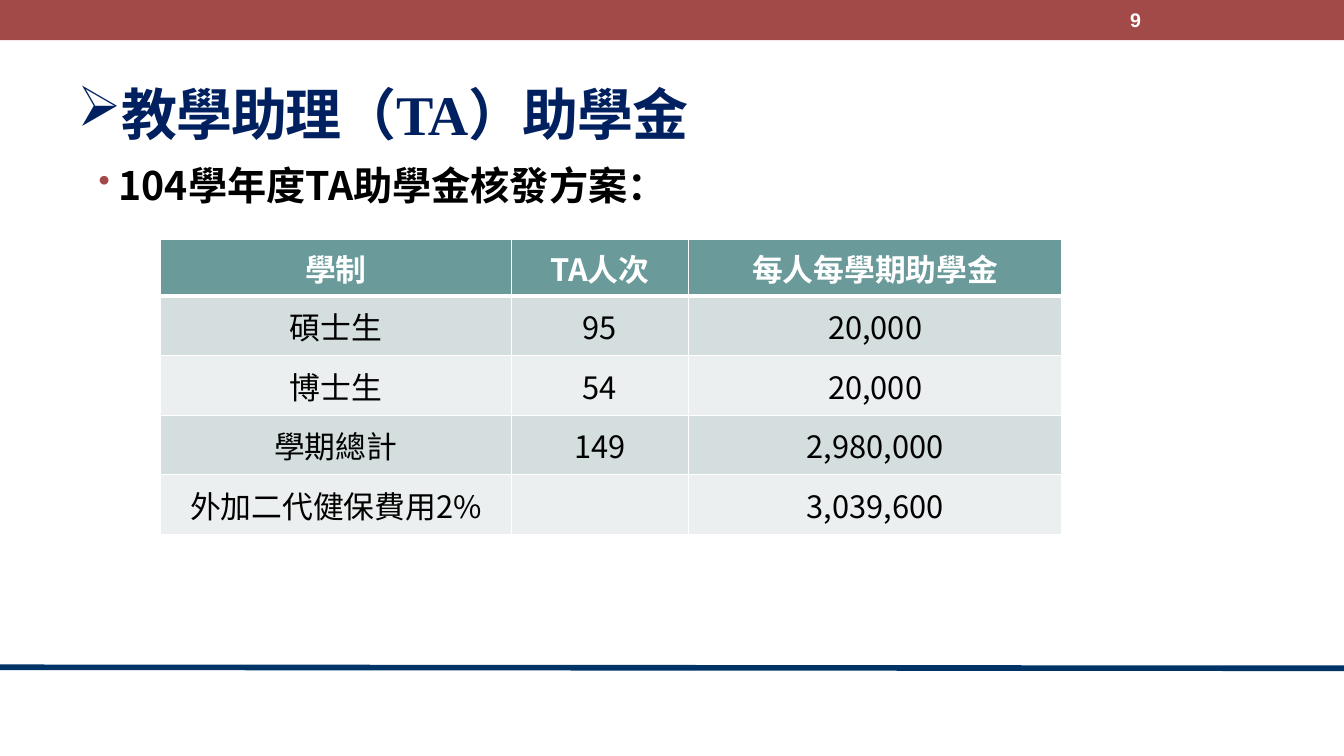
"""Build the slide on teaching assistant grants."""
from lxml.etree import SubElement
from pptx import Presentation
from pptx.dml.color import RGBColor
from pptx.enum.shapes import MSO_CONNECTOR, MSO_SHAPE
from pptx.enum.text import MSO_ANCHOR, PP_ALIGN
from pptx.oxml.ns import qn
from pptx.util import Inches, Pt

SANS = "Noto Sans CJK SC"
TEXTS = [
    {"text": "教學助理（TA）助學金", "box": (0.67, 0.58, 12, 1.08),
     "anchor": MSO_ANCHOR.MIDDLE, "spacing": -100, "bullet": {"char": "➢"},
     "format": {"size": 40, "name": "Times New Roman", "color": "002060", "bold": True}},
    {"text": "104學年度TA助學金核發方案：", "box": (0.88, 1.55, 10.5, 5.29),
     "anchor": MSO_ANCHOR.TOP, "space_before": 5.6,
     "bullet": {"char": "•", "indent": 0.2, "color": "A24A48", "percent": 85},
     "format": {"size": 28, "name": SANS, "color": "000000", "bold": True}},
    {"text": "9", "box": (11.11, 0.02, 1.56, 0.36), "anchor": MSO_ANCHOR.MIDDLE,
     "format": {"size": 14, "name": "Arial", "color": "FFFFFF", "bold": True}},
]
GRANTS = [
    ("學制", "TA人次", "每人每學期助學金"),
    ("碩士生", "95", "20,000"),
    ("博士生", "54", "20,000"),
    ("學期總計", "149", "2,980,000"),
    ("外加二代健保費用2%", "", "3,039,600"),
]
COLUMN_WIDTHS = (3.48, 1.76, 3.7)
ROW_HEIGHTS = (0.56, 0.59, 0.59, 0.59, 0.59)
HEADER_FILL = "6A9A9A"
BAND_FILLS = ("EBEFEF", "D4DEDE")
HEADER_FORMAT = {"size": 22, "name": SANS, "color": "FFFFFF", "bold": True}
BODY_FORMAT = {**HEADER_FORMAT, "color": "000000", "bold": False}


def color(value):
    return RGBColor.from_string(value)


def fill_solid(target, value):
    target.fill.solid()
    target.fill.fore_color.rgb = color(value)


def add_text(paragraph, text, formats, spacing=None):
    run = paragraph.add_run()
    run.text = text
    for key, value in formats.items():
        if key == "color":
            run.font.color.rgb = color(value)
        else:
            setattr(run.font, key, Pt(value) if key == "size" else value)
    properties = run._r.get_or_add_rPr()
    SubElement(properties, qn("a:ea"), typeface=SANS)
    if spacing:
        properties.set("spc", str(spacing))


def add_bullet(paragraph, char, indent=0, color=None, percent=None):
    properties = paragraph._p.get_or_add_pPr()
    properties.set("marL", str(Inches(indent)))
    properties.set("indent", str(-Inches(indent)))
    if color:
        SubElement(SubElement(properties, qn("a:buClr")), qn("a:srgbClr"), val=color)
    if percent:
        SubElement(properties, qn("a:buSzPct"), val=str(percent * 1000))
    SubElement(properties, qn("a:buChar"), char=char)


def add_text_box(slide, item):
    frame = slide.shapes.add_textbox(*map(Inches, item["box"])).text_frame
    frame.word_wrap = True
    frame.vertical_anchor = item["anchor"]
    paragraph = frame.paragraphs[0]
    if "space_before" in item:
        paragraph.space_before = Pt(item["space_before"])
    if "bullet" in item:
        add_bullet(paragraph, **item["bullet"])
    add_text(paragraph, item["text"], item["format"], item.get("spacing"))


def add_borders(cell, widths):
    properties = cell._tc.get_or_add_tcPr()
    for side, width in widths.items():
        line = SubElement(properties, qn(f"a:ln{side}"), w=str(Pt(width)))
        SubElement(SubElement(line, qn("a:solidFill")), qn("a:srgbClr"), val="FFFFFF")


def add_grant_table(slide):
    table = slide.shapes.add_table(
        len(GRANTS), len(COLUMN_WIDTHS), Inches(1.59), Inches(2.38),
        Inches(sum(COLUMN_WIDTHS)), Inches(sum(ROW_HEIGHTS))).table
    for column, width in zip(table.columns, COLUMN_WIDTHS):
        column.width = Inches(width)
    for index, (row, height, values) in enumerate(zip(table.rows, ROW_HEIGHTS, GRANTS)):
        row.height = Inches(height)
        header = index == 0
        borders = {"L": 1, "R": 1, "T": 3 if index == 1 else 1, "B": 3 if header else 1}
        for cell, value in zip(row.cells, values):
            cell.margin_left = cell.margin_right = cell.margin_top = Inches(0.01)
            cell.margin_bottom = 0
            cell.vertical_anchor = MSO_ANCHOR.MIDDLE
            add_borders(cell, borders)
            fill_solid(cell, HEADER_FILL if header else BAND_FILLS[index % 2])
            paragraph = cell.text_frame.paragraphs[0]
            paragraph.alignment = PP_ALIGN.CENTER
            if value:
                add_text(paragraph, value, HEADER_FORMAT if header else BODY_FORMAT)


def main():
    presentation = Presentation()
    presentation.slide_width, presentation.slide_height = Inches(13.33), Inches(7.5)
    slide = presentation.slides.add_slide(presentation.slide_layouts[6])
    banner = slide.shapes.add_shape(
        MSO_SHAPE.RECTANGLE, 0, 0, presentation.slide_width, Inches(0.4))
    banner.shadow.inherit = False
    fill_solid(banner, "A24A48")
    banner.line.fill.background()
    for item in TEXTS:
        add_text_box(slide, item)
    footer = slide.shapes.add_connector(
        MSO_CONNECTOR.STRAIGHT, 0, Inches(6.62), presentation.slide_width, Inches(6.63))
    footer.line.color.rgb = color("003366")
    footer.line.width = Pt(4)
    SubElement(footer._element.spPr, qn("a:effectLst"))
    add_grant_table(slide)
    presentation.save("out.pptx")


if __name__ == "__main__":
    main()
